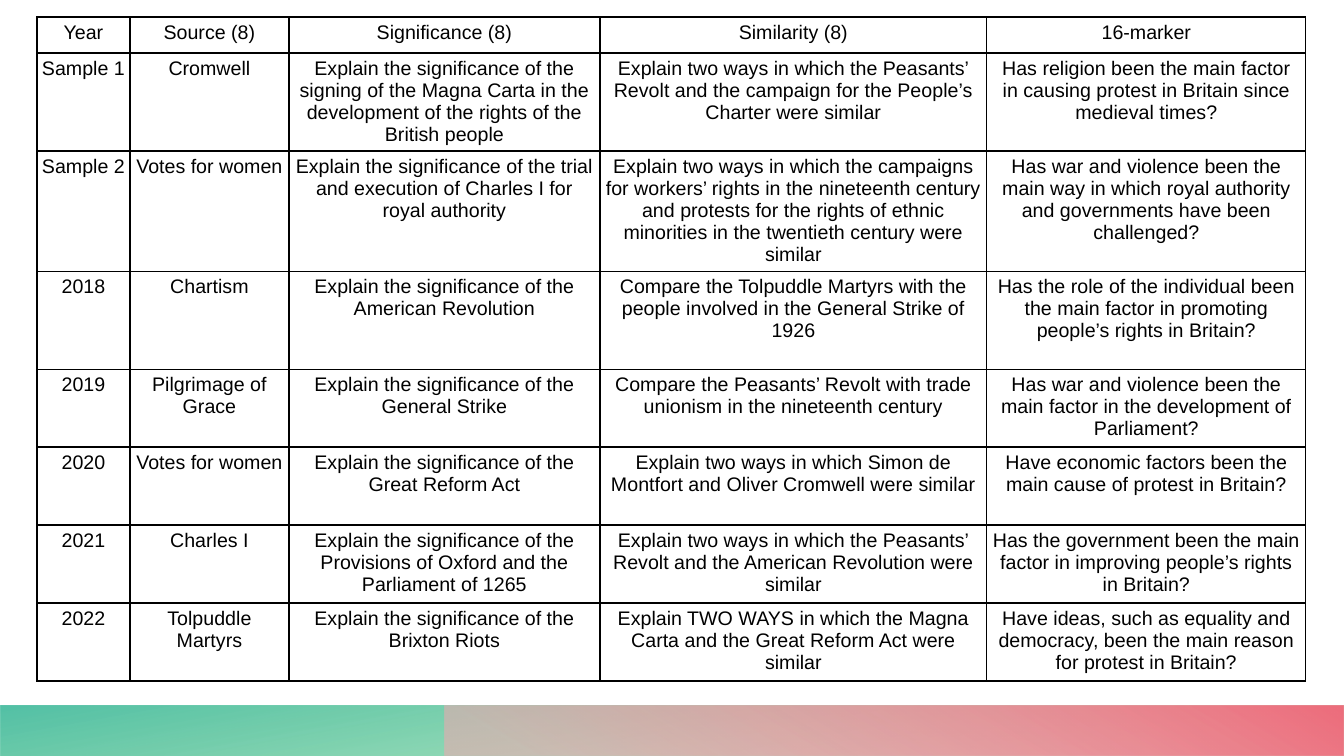
import pptx
import pptx.util
import pptx.oxml
import pptx.oxml.ns
import pptx.dml.color
import pptx.enum.shapes
import pptx.enum.text
from dataclasses import dataclass

PX = 12192000 / 1344
WIDE, HIGH = 1344, 756


@dataclass
class Theme:
    font: str = "Arial"
    size: int = 14
    ink: str = "000000"
    paper: str = "FFFFFF"
    rule: float = 1
    inset: int = 5
    # Stops: position %, colour, opacity %
    green: tuple = ((14, "30BA5F", 28), (100, "35B697", 85))
    pink: tuple = ((9, "F5A8B1", 55), (99, "EE6E7D", 100))


def emu(px):
    return pptx.util.Emu(round(px * PX))


def rgb(code):
    return pptx.dml.color.RGBColor.from_string(code)


def make(xml):
    """Build an element from markup whose first tag still lacks its namespace."""
    tag, rest = xml.split(" ", 1)
    return pptx.oxml.parse_xml(f"{tag} {pptx.oxml.ns.nsdecls('a')} {rest}")


class Deck:
    def __init__(self, theme):
        self.theme = theme
        self.prs = pptx.Presentation()
        self.prs.slide_width, self.prs.slide_height = emu(WIDE), emu(HIGH)
        self.slide = self.prs.slides.add_slide(self.prs.slide_layouts[6])

    def band(self, left, top, width, height, stops, angle, turn=0):
        """Add a mirrored rectangle with a gradient fill."""
        kind = pptx.enum.shapes.MSO_SHAPE.RECTANGLE
        shape = self.slide.shapes.add_shape(
            kind, emu(left), emu(top), emu(width), emu(height))
        shape.shadow.inherit = False
        shape.line.fill.background()
        shape.rotation = turn
        props = shape.fill._xPr
        props.xfrm.set("flipH", "1")
        marks = "".join(
            f'<a:gs pos="{pos * 1000}"><a:srgbClr val="{code}">'
            f'<a:alpha val="{alpha * 1000}"/></a:srgbClr></a:gs>'
            for pos, code, alpha in stops)
        props.insert(2, make(
            f'<a:gradFill rotWithShape="1"><a:gsLst>{marks}</a:gsLst>'
            f'<a:lin ang="{angle * 60000}" scaled="0"/></a:gradFill>'))

    def table(self, left, top, widths, heights, rows):
        """Add a ruled table; the header and first column stay unfilled."""
        grid = self.slide.shapes.add_table(
            len(rows), len(widths), emu(left), emu(top),
            emu(sum(widths)), emu(sum(heights))).table
        grid.first_row = grid.horz_banding = False
        for col, width in zip(grid.columns, widths):
            col.width = emu(width)
        for row, height in zip(grid.rows, heights):
            row.height = emu(height)
        for r, row in enumerate(rows):
            for c, text in enumerate(row):
                self.cell(grid.cell(r, c), text, r > 0 and c > 0)

    def cell(self, cell, text, filled):
        look = self.theme
        cell.margin_left = cell.margin_right = emu(look.inset)
        cell.margin_top = cell.margin_bottom = emu(look.inset)
        cell.text_frame.text = text
        para = cell.text_frame.paragraphs[0]
        para.alignment = pptx.enum.text.PP_ALIGN.CENTER
        font = para.runs[0].font
        font.name, font.size = look.font, pptx.util.Pt(look.size)
        font.bold = False
        font.color.rgb = rgb(look.ink)
        if filled:
            cell.fill.solid()
            cell.fill.fore_color.rgb = rgb(look.paper)
        else:
            cell.fill.background()
        # Borders come before the fill in the cell properties
        props = cell._tc.get_or_add_tcPr()
        for spot, side in enumerate("LRTB"):
            props.insert(spot, make(
                f'<a:ln{side} w="{pptx.util.Pt(look.rule)}"><a:solidFill>'
                f'<a:srgbClr val="{look.ink}"/></a:solidFill></a:ln{side}>'))


ROWS = [
    ("Year", "Source (8)", "Significance (8)", "Similarity (8)", "16-marker"),
    ("Sample 1", "Cromwell",
     "Explain the significance of the signing of the Magna Carta in the "
     "development of the rights of the British people",
     "Explain two ways in which the Peasants’ Revolt and the campaign for "
     "the People’s Charter were similar",
     "Has religion been the main factor in causing protest in Britain since "
     "medieval times?"),
    ("Sample 2", "Votes for women",
     "Explain the significance of the trial and execution of Charles I for "
     "royal authority",
     "Explain two ways in which the campaigns for workers’ rights in the "
     "nineteenth century and protests for the rights of ethnic minorities in "
     "the twentieth century were similar",
     "Has war and violence been the main way in which royal authority and "
     "governments have been challenged?"),
    ("2018", "Chartism",
     "Explain the significance of the American Revolution",
     "Compare the Tolpuddle Martyrs with the people involved in the General "
     "Strike of 1926",
     "Has the role of the individual been the main factor in promoting "
     "people’s rights in Britain?"),
    ("2019", "Pilgrimage of Grace",
     "Explain the significance of the General Strike",
     "Compare the Peasants’ Revolt with trade unionism in the nineteenth "
     "century",
     "Has war and violence been the main factor in the development of "
     "Parliament?"),
    ("2020", "Votes for women",
     "Explain the significance of the Great Reform Act",
     "Explain two ways in which Simon de Montfort and Oliver Cromwell were "
     "similar",
     "Have economic factors been the main cause of protest in Britain?"),
    ("2021", "Charles I",
     "Explain the significance of the Provisions of Oxford and the "
     "Parliament of 1265",
     "Explain two ways in which the Peasants’ Revolt and the American "
     "Revolution were similar",
     "Has the government been the main factor in improving people’s rights "
     "in Britain?"),
    ("2022", "Tolpuddle Martyrs",
     "Explain the significance of the Brixton Riots",
     "Explain TWO WAYS in which the Magna Carta and the Great Reform Act "
     "were similar",
     "Have ideas, such as equality and democracy, been the main reason for "
     "protest in Britain?"),
]


def main():
    theme = Theme()
    deck = Deck(theme)

    # Footer bands
    top, split = 706, 445
    deck.band(0, top, WIDE, HIGH - top, theme.green, 100, turn=180)
    deck.band(split, top, WIDE - split, HIGH - top, theme.pink, 240)

    # Exam questions by year
    deck.table(37, 17, [93, 159, 311, 387, 319],
               [36, 98, 119, 98] + [78] * 4, ROWS)

    deck.prs.save("out.pptx")


if __name__ == "__main__":
    main()
